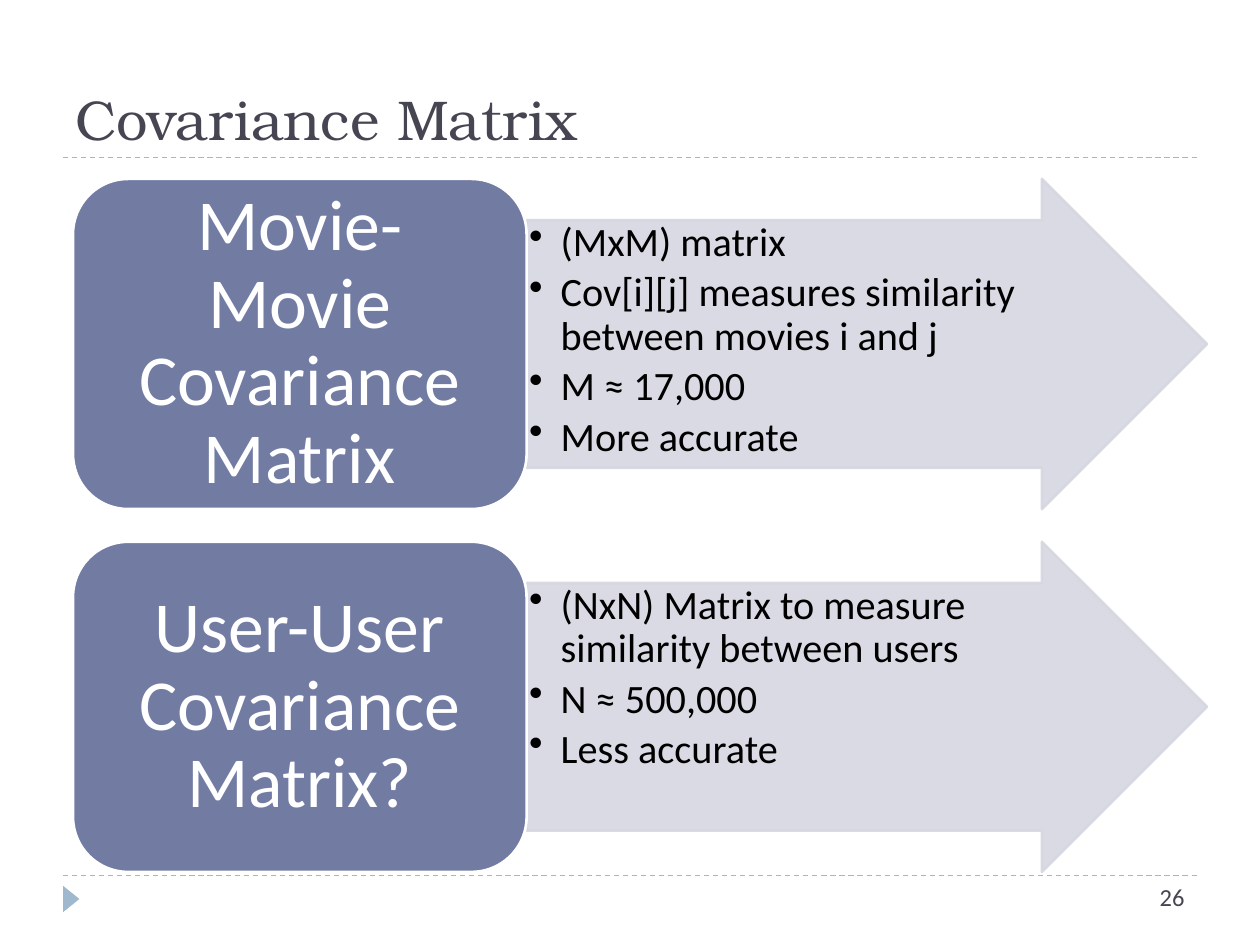
"""Build the covariance matrix slide with two labelled arrows."""
from dataclasses import dataclass

from lxml import etree
from pptx import Presentation
from pptx.dml.color import RGBColor
from pptx.enum.dml import MSO_LINE
from pptx.enum.shapes import MSO_CONNECTOR, MSO_SHAPE
from pptx.enum.text import MSO_ANCHOR, PP_ALIGN
from pptx.oxml.ns import qn
from pptx.util import Pt

PX = 9144
WIDE, HIGH = 1000, 750
ARROW = MSO_SHAPE.RIGHT_ARROW
ROUND = MSO_SHAPE.ROUNDED_RECTANGLE
WEDGE = MSO_SHAPE.ISOSCELES_TRIANGLE
LINE = MSO_CONNECTOR.STRAIGHT
DASH = MSO_LINE.DASH
TOP, MID, LOW = MSO_ANCHOR.TOP, MSO_ANCHOR.MIDDLE, MSO_ANCHOR.BOTTOM
LEFT, MIDST, RIGHT = PP_ALIGN.LEFT, PP_ALIGN.CENTER, PP_ALIGN.RIGHT


@dataclass(frozen=True)
class Theme:
    serif: str = "TeX Gyre Bonum"
    sans: str = "Calibri"
    ink: str = "464653"
    black: str = "000000"
    white: str = "FFFFFF"
    accent: str = "9FB8CD"
    card: str = "727CA3"
    pale: str = "D5D7E0"
    alpha: int = 90
    title: int = 32
    label: int = 41
    point: int = 23
    page: int = 14
    rule: float = 0.75
    edge: float = 1.5


@dataclass(frozen=True)
class Box:
    x: int
    y: int
    w: int
    h: int

    def emu(self) -> tuple[int, ...]:
        return tuple(n * PX for n in (self.x, self.y, self.w, self.h))


@dataclass(frozen=True)
class Style:
    size: int
    color: str
    font: str
    align: int = LEFT
    anchor: int = TOP
    pad: tuple[int, int] = (10, 5)
    lead: float = 1.0
    after: int = 0
    dent: int = 0


@dataclass(frozen=True)
class Row:
    y: int
    label: str
    points: tuple[str, ...]


THEME = Theme()
TITLE = Style(THEME.title, THEME.ink, THEME.serif, anchor=LOW)
LABEL = Style(THEME.label, THEME.white, THEME.sans, MIDST, MID, (17, 9), 0.9)
POINT = Style(THEME.point, THEME.black, THEME.sans, pad=(2, 2), lead=0.9,
              after=4, dent=25)
PAGE = Style(THEME.page, THEME.ink, THEME.sans, RIGHT)
ROWS = (
    Row(142, "Movie-Movie Covariance Matrix", (
        "(MxM) matrix",
        "Cov[i][j] measures similarity between movies i and j",
        "M ≈ 17,000",
        "More accurate",
    )),
    Row(430, "User-User Covariance Matrix?", (
        "(NxN) Matrix to measure similarity between users",
        "N ≈ 500,000",
        "Less accurate",
    )),
)


def apply(target, values: dict) -> None:
    for name, value in values.items():
        setattr(target, name, value)


def bullet(para, dent: int) -> None:
    props = para._p.get_or_add_pPr()
    props.set("marL", str(dent * PX))
    props.set("indent", str(-dent * PX))
    etree.SubElement(props, qn("a:buChar")).set("char", "•")


def write(slide, box: Box, style: Style, *texts: str) -> None:
    frame = slide.shapes.add_textbox(*box.emu()).text_frame
    side, edge = (n * PX for n in style.pad)
    apply(frame, {"word_wrap": True, "vertical_anchor": style.anchor,
                  "margin_left": side, "margin_right": side,
                  "margin_top": edge, "margin_bottom": edge})
    for i, text in enumerate(texts):
        para = frame.add_paragraph() if i else frame.paragraphs[0]
        apply(para, {"alignment": style.align, "line_spacing": style.lead,
                     "space_after": Pt(style.after)})
        if style.dent:
            bullet(para, style.dent)
        run = para.add_run()
        run.text = text
        apply(run.font, {"size": Pt(style.size), "name": style.font})
        run.font.color.rgb = RGBColor.from_string(style.color)


def draw(slide, kind: int, box: Box, fill: str, edge: str = ""):
    shape = slide.shapes.add_shape(kind, *box.emu())
    shape.shadow.inherit = False
    shape.fill.solid()
    shape.fill.fore_color.rgb = RGBColor.from_string(fill)
    if edge:
        shape.line.color.rgb = RGBColor.from_string(edge)
        shape.line.width = Pt(THEME.edge)
    else:
        shape.line.fill.background()
    return shape


def rule(slide, y: int) -> None:
    line = slide.shapes.add_connector(LINE, 50 * PX, y * PX, 950 * PX, y * PX)
    line.line.color.rgb = RGBColor.from_string(THEME.accent)
    apply(line.line, {"width": Pt(THEME.rule), "dash_style": DASH})
    etree.SubElement(line._element.spPr, qn("a:effectLst"))


def band(slide, row: Row) -> None:
    arrow = draw(slide, ARROW, Box(418, row.y, 540, 262), THEME.pale, THEME.pale)
    arrow.adjustments[0] = 0.75
    for color in arrow._element.spPr.iter(qn("a:srgbClr")):
        etree.SubElement(color, qn("a:alpha")).set("val", str(THEME.alpha * 1000))
    write(slide, Box(418, row.y + 32, 442, 196), POINT, *row.points)
    draw(slide, ROUND, Box(58, row.y, 360, 262), THEME.card, THEME.white)
    write(slide, Box(71, row.y + 13, 334, 236), LABEL, row.label)


def main() -> None:
    deck = Presentation()
    apply(deck, {"slide_width": WIDE * PX, "slide_height": HIGH * PX})
    slide = deck.slides.add_slide(deck.slide_layouts[6])
    for y in (695, 125):
        rule(slide, y)
    draw(slide, WEDGE, Box(46, 707, 21, 13), THEME.accent).rotation = 90
    write(slide, Box(50, 17, 900, 108), TITLE, "Covariance Matrix")
    for row in ROWS:
        band(slide, row)
    write(slide, Box(717, 695, 233, 40), PAGE, "26")
    deck.save("out.pptx")


if __name__ == "__main__":
    main()
